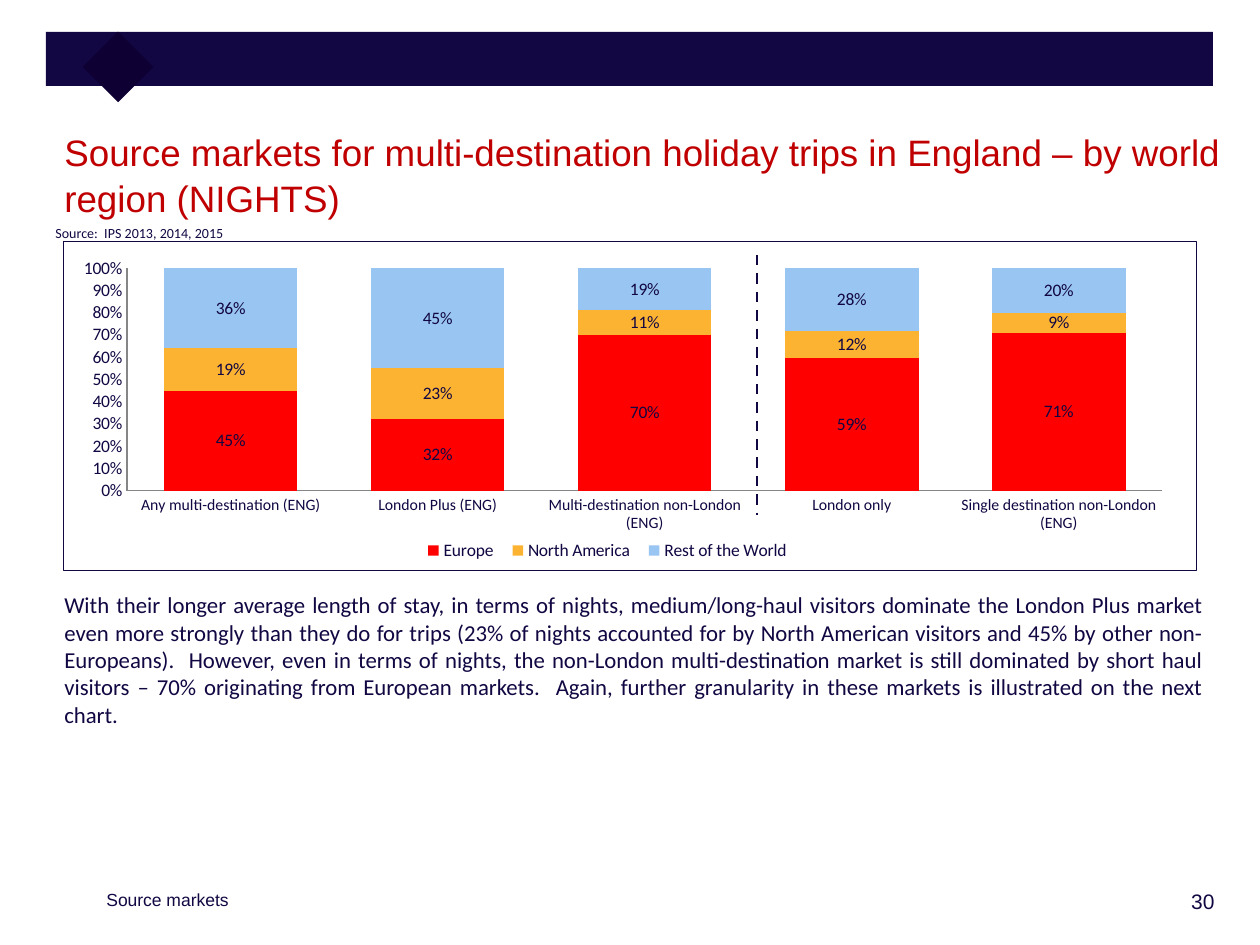
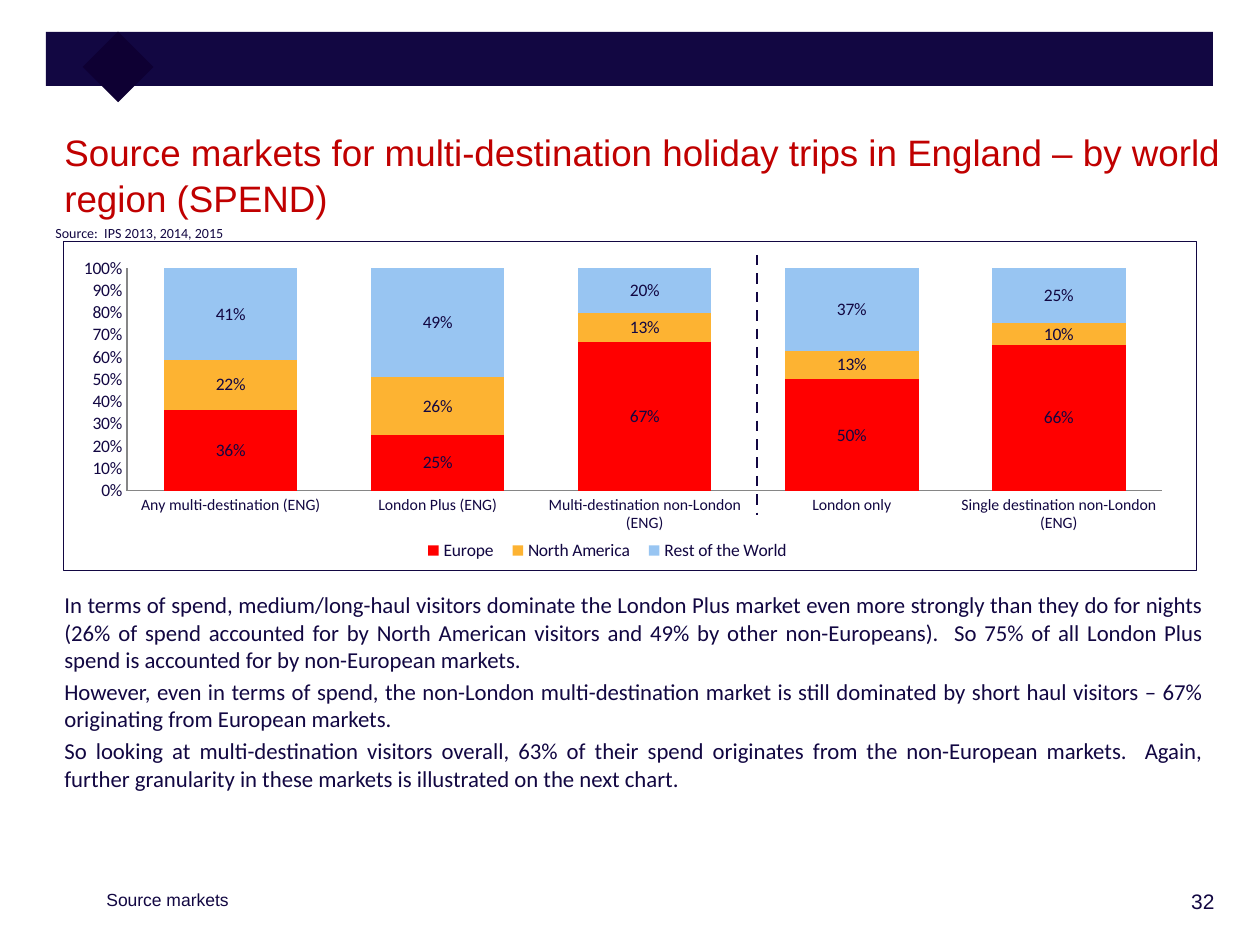
"""Build two slides on the source markets of holiday trips in England."""
from lxml import etree
from pptx import Presentation
from pptx import util as u
from pptx.chart.data import CategoryChartData
from pptx.dml.color import RGBColor
from pptx.enum import chart as charts, dml, shapes, text
from pptx.oxml import parse_xml
from pptx.oxml.ns import nsdecls, qn

NAVY = RGBColor(0x12, 0x07, 0x42)
DEEP_NAVY = RGBColor(0x0E, 0x00, 0x33)
TITLE_RED = RGBColor(0xC0, 0x00, 0x00)
AXIS_GREY = RGBColor(0x86, 0x86, 0x86)
REGION_COLOURS = {
    "Europe": RGBColor(0xFF, 0x00, 0x00),
    "North America": RGBColor(0xFD, 0xB3, 0x32),
    "Rest of the World": RGBColor(0x98, 0xC5, 0xF2),
}
HEADING_FONT, BODY_FONT = "Arial", "Calibri"
TRIP_TYPES = [
    "Any multi-destination (ENG)",
    "London Plus (ENG)",
    "Multi-destination non-London (ENG)",
    "London only",
    "Single destination non-London (ENG)",
]
PAGES = [
    {
        "number": "30",
        "measure": "NIGHTS",
        "shares": [
            (0.45, 0.32, 0.70, 0.59, 0.71),
            (0.19, 0.23, 0.11, 0.12, 0.09),
            (0.36, 0.45, 0.19, 0.28, 0.20),
        ],
        "comments": [
            "With their longer average length of stay, in terms of nights, "
            "medium/long-haul visitors dominate the London Plus market even more "
            "strongly than they do for trips (23% of nights accounted for by North "
            "American visitors and 45% by other non-Europeans).  However, even in "
            "terms of nights, the non-London multi-destination market is still "
            "dominated by short haul visitors – 70% originating from European "
            "markets.  Again, further granularity in these markets is illustrated "
            "on the next chart.",
        ],
    },
    {
        "number": "32",
        "measure": "SPEND",
        "shares": [
            (0.36, 0.25, 0.67, 0.50, 0.66),
            (0.22, 0.26, 0.13, 0.13, 0.10),
            (0.41, 0.49, 0.20, 0.37, 0.25),
        ],
        "comments": [
            "In terms of spend, medium/long-haul visitors dominate the London Plus "
            "market even more strongly than they do for nights (26% of spend "
            "accounted for by North American visitors and 49% by other "
            "non-Europeans).  So 75% of all London Plus spend is accounted for by "
            "non-European markets.",
            "However, even in terms of spend, the non-London multi-destination "
            "market is still dominated by short haul visitors – 67% originating "
            "from European markets.",
            "So looking at multi-destination visitors overall, 63% of their spend "
            "originates from the non-European markets.  Again, further granularity "
            "in these markets is illustrated on the next chart.",
        ],
    },
]


def px(length):
    """Turn pixels at 126 to the inch into EMU."""
    return u.Emu(round(length * 914400 / 126))


def add_text(page, area, paragraphs, size, font=HEADING_FONT, colour=NAVY,
             align=text.PP_ALIGN.LEFT, line_spacing=None):
    """Add a wrapped text box with one run for each paragraph."""
    box = page.shapes.add_textbox(*map(px, area))
    frame = box.text_frame
    frame.word_wrap = True
    for index, words in enumerate(paragraphs):
        para = frame.add_paragraph() if index else frame.paragraphs[0]
        para.alignment = align
        para.line_spacing = line_spacing
        if index:
            para.space_before = u.Pt(size * 0.2)
        span = para.add_run()
        span.text = words
        span.font.size = u.Pt(size)
        span.font.name = font
        span.font.color.rgb = colour


def add_block(page, area, colour, rotation=0):
    """Add a plain filled rectangle."""
    block = page.shapes.add_shape(shapes.MSO_SHAPE.RECTANGLE, *map(px, area))
    block.shadow.inherit = False
    block.fill.solid()
    block.fill.fore_color.rgb = colour
    block.line.fill.background()
    block.rotation = rotation


def add_divider(page, x, top, bottom):
    """Add a vertical dashed line."""
    line = page.shapes.add_connector(
        shapes.MSO_CONNECTOR.STRAIGHT, px(x), px(top), px(x), px(bottom))
    line.line.color.rgb = NAVY
    line.line.width = u.Pt(1.5)
    line.line.dash_style = dml.MSO_LINE.DASH
    etree.SubElement(line._element.spPr, qn("a:effectLst"))


def make_layout(x, y, w, h, inner=False):
    """Return a manual chart layout given as fractions of the chart."""
    target = '<c:layoutTarget val="inner"/>' if inner else ""
    return parse_xml(
        f'<c:layout {nsdecls("c")}><c:manualLayout>{target}'
        '<c:xMode val="edge"/><c:yMode val="edge"/>'
        f'<c:x val="{x}"/><c:y val="{y}"/><c:w val="{w}"/><c:h val="{h}"/>'
        '</c:manualLayout></c:layout>')


def arrange_chart(chart):
    """Frame the chart and place its plot and legend."""
    space = chart._chartSpace
    for old in list(space.iter(qn("c:layout"))):
        old.getparent().remove(old)
    plot_area = next(space.iter(qn("c:plotArea")))
    plot_area.insert(0, make_layout(0.056, 0.081, 0.914, 0.677, inner=True))
    legend_position = next(space.iter(qn("c:legendPos")))
    legend_position.addnext(make_layout(0.31, 0.9, 0.34, 0.08))
    space.find(qn("c:txPr")).addprevious(parse_xml(
        f'<c:spPr {nsdecls("c", "a")}><a:noFill/><a:ln w="9525"><a:solidFill>'
        f'<a:srgbClr val="{NAVY}"/></a:solidFill></a:ln></c:spPr>'))


def style_axis(axis, size):
    """Give an axis a grey line, no ticks and small labels."""
    axis.has_major_gridlines = False
    axis.major_tick_mark = charts.XL_TICK_MARK.NONE
    axis.minor_tick_mark = charts.XL_TICK_MARK.NONE
    axis.format.line.color.rgb = AXIS_GREY
    axis.tick_labels.font.size = u.Pt(size)


def add_share_chart(page, area, shares):
    """Add the stacked columns of world region shares by trip type."""
    data = CategoryChartData(number_format="0%")
    data.categories = TRIP_TYPES
    for region, values in zip(REGION_COLOURS, shares):
        data.add_series(region, values)
    chart = page.shapes.add_chart(
        charts.XL_CHART_TYPE.COLUMN_STACKED_100, *map(px, area), data).chart
    chart.has_title = False
    chart.font.name = BODY_FONT
    chart.font.size = u.Pt(10)
    chart.font.color.rgb = NAVY
    chart.has_legend = True
    chart.legend.position = charts.XL_LEGEND_POSITION.BOTTOM
    chart.legend.include_in_layout = False
    style_axis(chart.category_axis, 9)
    style_axis(chart.value_axis, 10)
    chart.value_axis.minimum_scale = 0
    chart.value_axis.maximum_scale = 1
    chart.value_axis.major_unit = 0.1
    chart.value_axis.tick_labels.number_format = "0%"
    chart.value_axis.tick_labels.number_format_is_linked = False
    plot = chart.plots[0]
    plot.gap_width, plot.overlap = 55, 100
    plot.vary_by_categories = False
    for series, colour in zip(plot.series, REGION_COLOURS.values()):
        series.format.fill.solid()
        series.format.fill.fore_color.rgb = colour
        labels = series.data_labels
        labels.show_value = True
        labels.number_format = "0%"
        labels.number_format_is_linked = False
    arrange_chart(chart)


def add_page_frame(page, number):
    """Add the band, diamond, section name and page number."""
    add_block(page, (46, 32, 1167, 54), NAVY)
    add_block(page, (93, 42, 50, 50), DEEP_NAVY, rotation=45)
    add_text(page, (94, 883, 336, 38), ["Source markets"], 10)
    add_text(page, (1075, 882, 152, 45), [number], 12,
             align=text.PP_ALIGN.RIGHT)


def add_market_page(deck, content):
    """Add one slide with title, chart and comments."""
    page = deck.slides.add_slide(deck.slide_layouts[6])
    add_page_frame(page, content["number"])
    title = ("Source markets for multi-destination holiday trips in England "
             f"– by world region ({content['measure']})")
    add_text(page, (52, 122, 1208, 77), [title], 21, colour=TITLE_RED,
             line_spacing=1.04)
    add_text(page, (43, 218, 200, 23), ["Source:  IPS 2013, 2014, 2015"], 8,
             BODY_FONT)
    add_share_chart(page, (63, 241, 1134, 330), content["shares"])
    add_divider(page, 757, 255, 515)
    add_text(page, (52, 585, 1162, 287), content["comments"], 13, BODY_FONT,
             align=text.PP_ALIGN.JUSTIFY)


def main():
    """Build and save the deck."""
    deck = Presentation()
    deck.slide_width, deck.slide_height = px(1260), px(945)
    for content in PAGES:
        add_market_page(deck, content)
    deck.save("out.pptx")


if __name__ == "__main__":
    main()
